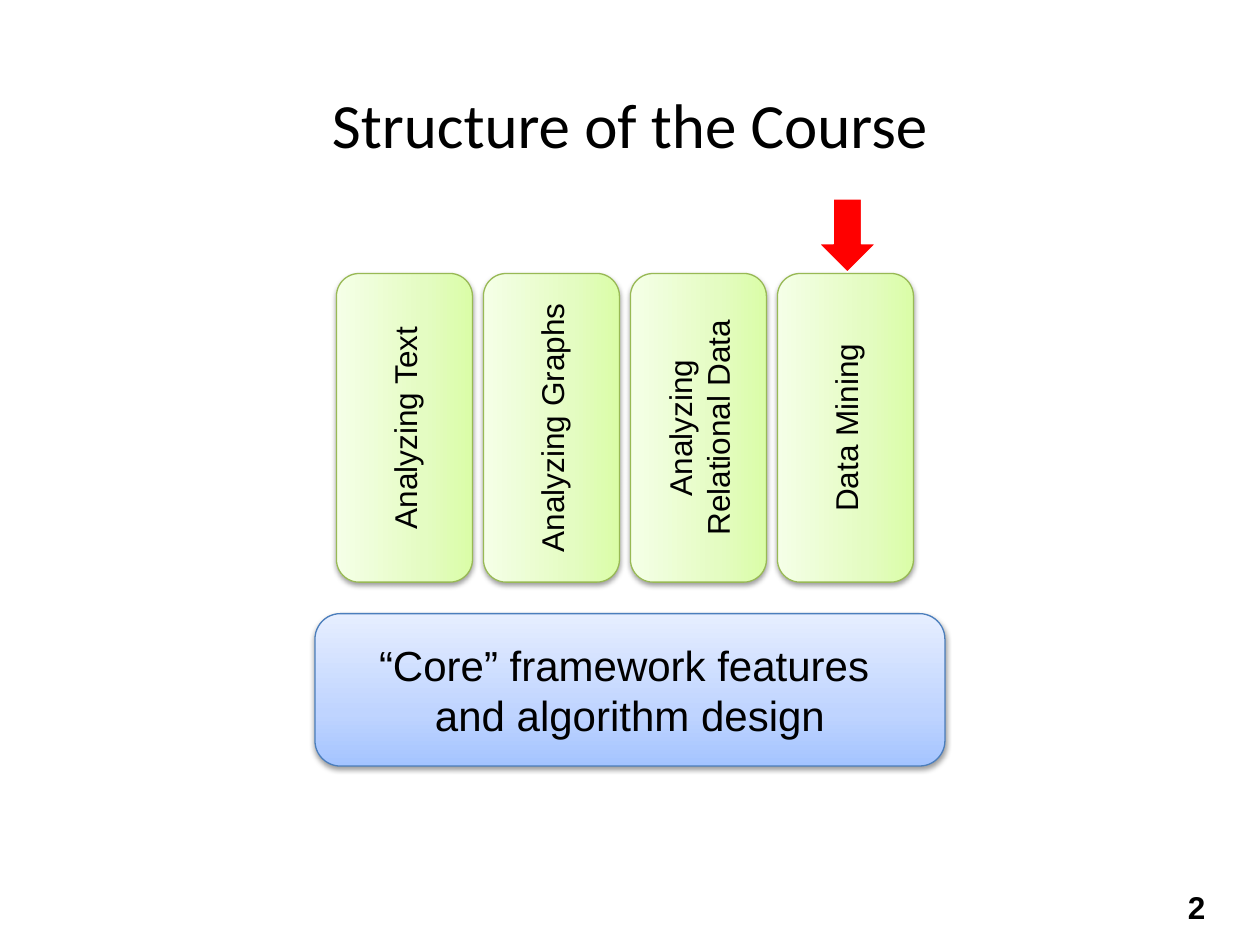
from copy import deepcopy

from lxml.etree import SubElement
from pptx import Presentation
from pptx.dml.color import RGBColor
from pptx.enum.shapes import MSO_SHAPE as Shape
from pptx.enum.text import MSO_ANCHOR as Anchor, PP_ALIGN as Align
from pptx.oxml.ns import qn
from pptx.util import Inches, Pt

BLACK = RGBColor(0x00, 0x00, 0x00)
WHITE = RGBColor(0xFF, 0xFF, 0xFF)
RED = RGBColor(0xFF, 0x00, 0x00)
BLUE_LINE = RGBColor(0x4B, 0x7E, 0xBC)
BLUE_STOPS = (RGBColor(0xA4, 0xC4, 0xFF), RGBColor(0xBF, 0xD4, 0xFF),
              RGBColor(0xE6, 0xEE, 0xFF))
GREEN_LINE = RGBColor(0x98, 0xB9, 0x55)
GREEN_STOPS = (RGBColor(0xDA, 0xFD, 0xA7), RGBColor(0xE4, 0xFC, 0xC2),
               RGBColor(0xF5, 0xFF, 0xE7))
STOP_POSITIONS = (0, 0.35, 1)
TOPICS = ("Analyzing Text", "Analyzing Graphs", "Analyzing Relational Data",
          "Data Mining")


def write(shape, text, size=18, font="Arial", bold=False, align=Align.CENTER):
    frame = shape.text_frame
    frame.word_wrap = True
    frame.vertical_anchor = Anchor.MIDDLE
    paragraph = frame.paragraphs[0]
    paragraph.text = text
    paragraph.alignment = align
    for run in paragraph.runs:
        run.font.size = Pt(size)
        run.font.name = font
        run.font.bold = bold
        run.font.color.rgb = BLACK


def add_label(slide, text, left, top, width, height, **text_format):
    label = slide.shapes.add_textbox(
        Inches(left), Inches(top), Inches(width), Inches(height))
    write(label, text, **text_format)


def add_outlined(slide, kind, left, top, width, height, line_color):
    shape = slide.shapes.add_shape(
        kind, Inches(left), Inches(top), Inches(width), Inches(height))
    shape.line.color.rgb = line_color
    shape.line.width = Pt(0.75)
    shape.shadow.inherit = False
    return shape


def fill_upward(shape, colors):
    """Three-stop gradient that runs from bottom to top."""
    shape.fill.gradient()
    shape.fill.gradient_angle = 90
    stop_list = shape.element.spPr.find(".//" + qn("a:gsLst"))
    stop_list.insert(1, deepcopy(stop_list[0]))
    stops = shape.fill.gradient_stops
    for stop, color, position in zip(stops, colors, STOP_POSITIONS):
        stop.color.rgb = color
        stop.position = position


def add_drop_shadow(shape):
    effects = shape.element.spPr.find(qn("a:effectLst"))
    shadow = SubElement(effects, qn("a:outerShdw"), blurRad=str(Pt(3.1)),
                        dist=str(Pt(1.6)), dir="5400000", rotWithShape="0")
    color = SubElement(shadow, qn("a:srgbClr"), val=str(BLACK))
    SubElement(color, qn("a:alpha"), val="38000")


def add_block(slide, text, left, top, width, height, line_color, stops, size):
    block = add_outlined(slide, Shape.ROUNDED_RECTANGLE, left, top, width,
                         height, line_color)
    fill_upward(block, stops)
    add_drop_shadow(block)
    write(block, text, size=size)
    return block


def add_pillars(slide, left, top, width, height, pillar_width=1.08):
    """Evenly spaced upright blocks, each a wide block turned on its end."""
    step = (width - pillar_width) / (len(TOPICS) - 1)
    offset = (height - pillar_width) / 2
    for index, topic in enumerate(TOPICS):
        pillar = add_block(slide, topic, left + index * step - offset,
                           top + offset, height, pillar_width,
                           GREEN_LINE, GREEN_STOPS, 18)
        pillar.rotation = 270


def add_marker(slide, left, top, width, height):
    arrow = add_outlined(slide, Shape.DOWN_ARROW, left, top, width, height,
                         WHITE)
    arrow.fill.solid()
    arrow.fill.fore_color.rgb = RED


def main():
    deck = Presentation()
    deck.slide_width, deck.slide_height = Inches(10), Inches(7.5)
    slide = deck.slides.add_slide(deck.slide_layouts[6])

    # Title
    add_label(slide, "Structure of the Course", 0, 0.6, 10, 0.75,
              size=36, font="Calibri")
    # Foundation and the topics that stand on it
    add_block(slide, "“Core” framework features \nand algorithm design",
              2.5, 4.87, 5, 1.21, BLUE_LINE, BLUE_STOPS, 24)
    add_pillars(slide, 2.67, 2.17, 4.58, 2.45)
    # Page number
    add_label(slide, "2", 9.33, 7, 0.58, 0.4, bold=True, align=Align.LEFT)
    # Current topic
    add_marker(slide, 6.5, 1.58, 0.45, 0.58)

    deck.save("out.pptx")


if __name__ == "__main__":
    main()
